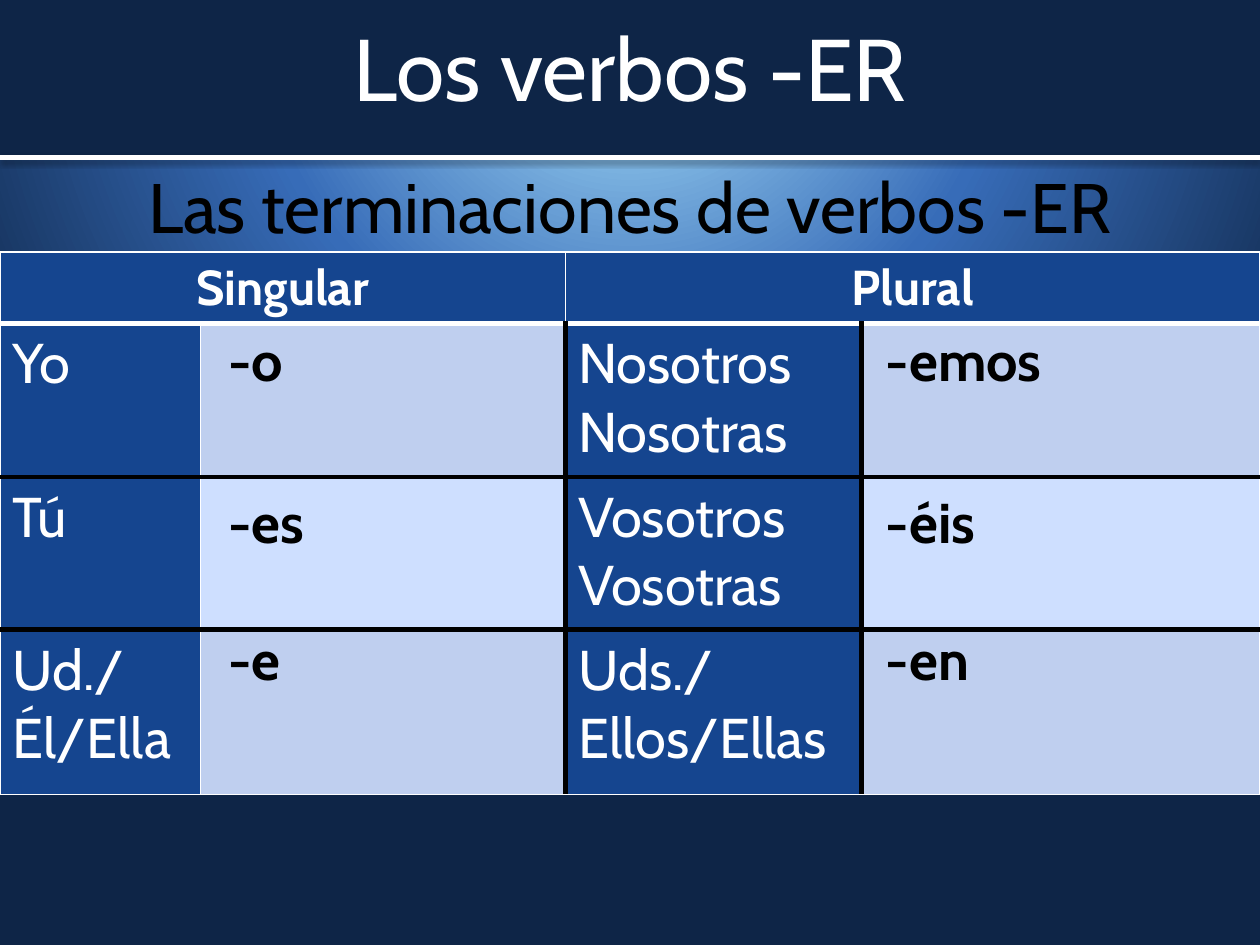
"""Build a slide on the present-tense endings of Spanish -ER verbs."""
from dataclasses import dataclass
from typing import Optional

from lxml import etree
from pptx import Presentation, util as u
from pptx.dml.color import RGBColor
from pptx.enum import shapes, text
from pptx.oxml import parse_xml
from pptx.oxml.ns import nsdecls, qn

WIDE, HIGH = 10, 7.5
COLS = (1.59, 2.9, 2.35, 3.16)
ROWS = (0.56, 1.22, 1.21, 1.31)
TOP = 2
PLAIN = "{2D5ABB26-0587-4C30-8999-92F81FD0307C}"


@dataclass(frozen=True)
class Theme:
    font: str = "Cabin"
    navy: str = "0E2547"
    blue: str = "15458F"
    mid: str = "376CB8"
    sky: str = "B1E9FF"
    band: tuple = ("BFCFEF", "CEDFFF")
    white: str = "FFFFFF"
    black: str = "000000"
    title: int = 50
    lead: int = 40
    head: int = 28
    body: int = 32


@dataclass(frozen=True)
class Box:
    left: float
    top: float
    width: float
    height: float

    def place(self) -> tuple:
        return (u.Inches(self.left * WIDE), u.Inches(self.top * HIGH),
                u.Inches(self.width * WIDE), u.Inches(self.height * HIGH))


@dataclass(frozen=True)
class Ending:
    word: str
    left: float
    top: float


@dataclass(frozen=True)
class Edge:
    color: str
    width: float


T = Theme()
THIN = Edge(T.white, 1)
HEAVY = Edge(T.white, 3)
DARK = Edge(T.black, 3)
PEOPLE = (
    (("Yo",), ("Nosotros", "Nosotras")),
    (("Tú",), ("Vosotros", "Vosotras")),
    (("Ud./Él/Ella",), ("Uds./Ellos/Ellas",)),
)
ENDINGS = [Ending(word, left, top)
           for top, pair in ((2.55, ("-o", "-emos")), (3.83, ("-es", "-éis")), (4.92, ("-e", "-en")))
           for left, word in zip((1.71, 6.93), pair)]


def write(frame, lines: tuple, size: int, color: str, bold: bool = False,
          align: Optional[text.PP_ALIGN] = None) -> None:
    for i, line in enumerate(lines):
        para = frame.paragraphs[0] if i == 0 else frame.add_paragraph()
        para.alignment = align
        run = para.add_run()
        run.text = line
        run.font.name = T.font
        run.font.size = u.Pt(size)
        run.font.bold = bold
        run.font.color.rgb = RGBColor.from_string(color)


def label(slide, box: Box, line: str, size: int, color: str, anchor: text.MSO_ANCHOR) -> None:
    frame = slide.shapes.add_textbox(*box.place()).text_frame
    frame.word_wrap = True
    frame.vertical_anchor = anchor
    write(frame, (line,), size, color, align=text.PP_ALIGN.CENTER)


def grid(slide, left: float, top: float, cols: tuple, rows: tuple):
    size = [u.Inches(v) for v in (left, top, sum(cols), sum(rows))]
    table = slide.shapes.add_table(len(rows), len(cols), *size).table
    table.first_row = table.horz_banding = False
    table._tbl.tblPr.find(qn("a:tableStyleId")).text = PLAIN
    for part, width in zip(table.columns, cols):
        part.width = u.Inches(width)
    for part, height in zip(table.rows, rows):
        part.height = u.Inches(height)
    return table


def border(cell, **edges: Edge) -> None:
    props = cell._tc.get_or_add_tcPr()
    for side, edge in edges.items():
        line = etree.SubElement(props, qn(f"a:ln{side}"), w=str(u.Pt(edge.width)))
        fill = etree.SubElement(line, qn("a:solidFill"))
        etree.SubElement(fill, qn("a:srgbClr"), val=edge.color)


def paint(cell, color: str) -> None:
    cell.fill.solid()
    cell.fill.fore_color.rgb = RGBColor.from_string(color)


def backdrop(slide) -> None:
    stops = "".join(f'<a:gs pos="{pos * 1000}"><a:srgbClr val="{color}"/></a:gs>'
                    for pos, color in ((0, T.sky), (48, T.mid), (100, T.navy)))
    slide._element.cSld.insert(0, parse_xml(
        f'<p:bg {nsdecls("p", "a")}><p:bgPr><a:gradFill rotWithShape="1"><a:gsLst>{stops}</a:gsLst>'
        '<a:path path="circle"><a:fillToRect l="50000" t="-80000" r="50000" b="180000"/></a:path>'
        '</a:gradFill><a:effectLst/></p:bgPr></p:bg>'))


def banner(slide) -> None:
    bar = slide.shapes.add_shape(shapes.MSO_SHAPE.RECTANGLE, *Box(0, 0, 1, 1 / 6).place())
    bar.shadow.inherit = False
    bar.fill.solid()
    bar.fill.fore_color.rgb = RGBColor.from_string(T.navy)
    bar.line.fill.background()


def rule(slide) -> None:
    y = u.Inches(HIGH / 6)
    line = slide.shapes.add_connector(shapes.MSO_CONNECTOR.STRAIGHT, 0, y, u.Inches(WIDE), y)
    line.line.color.rgb = RGBColor.from_string(T.white)
    line.line.width = u.Pt(3)
    line._element.spPr.append(parse_xml(
        f'<a:effectLst {nsdecls("a")}><a:outerShdw blurRad="{u.Pt(3.1)}" dist="{u.Pt(1.6)}" '
        f'dir="5400000" rotWithShape="0"><a:srgbClr val="{T.black}"><a:alpha val="38000"/>'
        '</a:srgbClr></a:outerShdw></a:effectLst>'))


def chart(slide) -> None:
    table = grid(slide, 0, TOP, COLS, ROWS)
    for col, name in ((0, "Singular"), (2, "Plural")):
        for c in (col, col + 1):
            border(table.cell(0, c), L=THIN, R=THIN, T=THIN, B=HEAVY)
            paint(table.cell(0, c), T.blue)
        table.cell(0, col).merge(table.cell(0, col + 1))
        write(table.cell(0, col).text_frame, (name,), T.head, T.white, True, text.PP_ALIGN.CENTER)
    for r, pair in enumerate(PEOPLE, 1):
        for c in range(len(COLS)):
            cell = table.cell(r, c)
            border(cell, L=DARK if c > 1 else THIN, R=DARK if c in (1, 2) else THIN,
                   T=DARK if r > 1 else HEAVY, B=DARK if r < len(PEOPLE) else THIN)
            paint(cell, T.band[(r - 1) % 2] if c % 2 else T.blue)
            if c % 2 == 0:
                write(cell.text_frame, pair[c // 2], T.body, T.white)


def suffix(slide, item: Ending) -> None:
    cell = grid(slide, item.left, item.top, (2.4,), (0.63,)).cell(0, 0)
    write(cell.text_frame, (item.word,), T.body, T.black, True)


def main() -> None:
    deck = Presentation()
    deck.slide_width, deck.slide_height = u.Inches(WIDE), u.Inches(HIGH)
    slide = deck.slides.add_slide(deck.slide_layouts[6])
    backdrop(slide)
    banner(slide)
    label(slide, Box(0, 1 / 6, 1, 0.1), "Las terminaciones de verbos -ER", T.lead, T.black,
          text.MSO_ANCHOR.TOP)
    rule(slide)
    label(slide, Box(0, 0, 1, 0.14), "Los verbos -ER", T.title, T.white, text.MSO_ANCHOR.MIDDLE)
    chart(slide)
    for item in ENDINGS:
        suffix(slide, item)
    deck.save("out.pptx")


if __name__ == "__main__":
    main()
